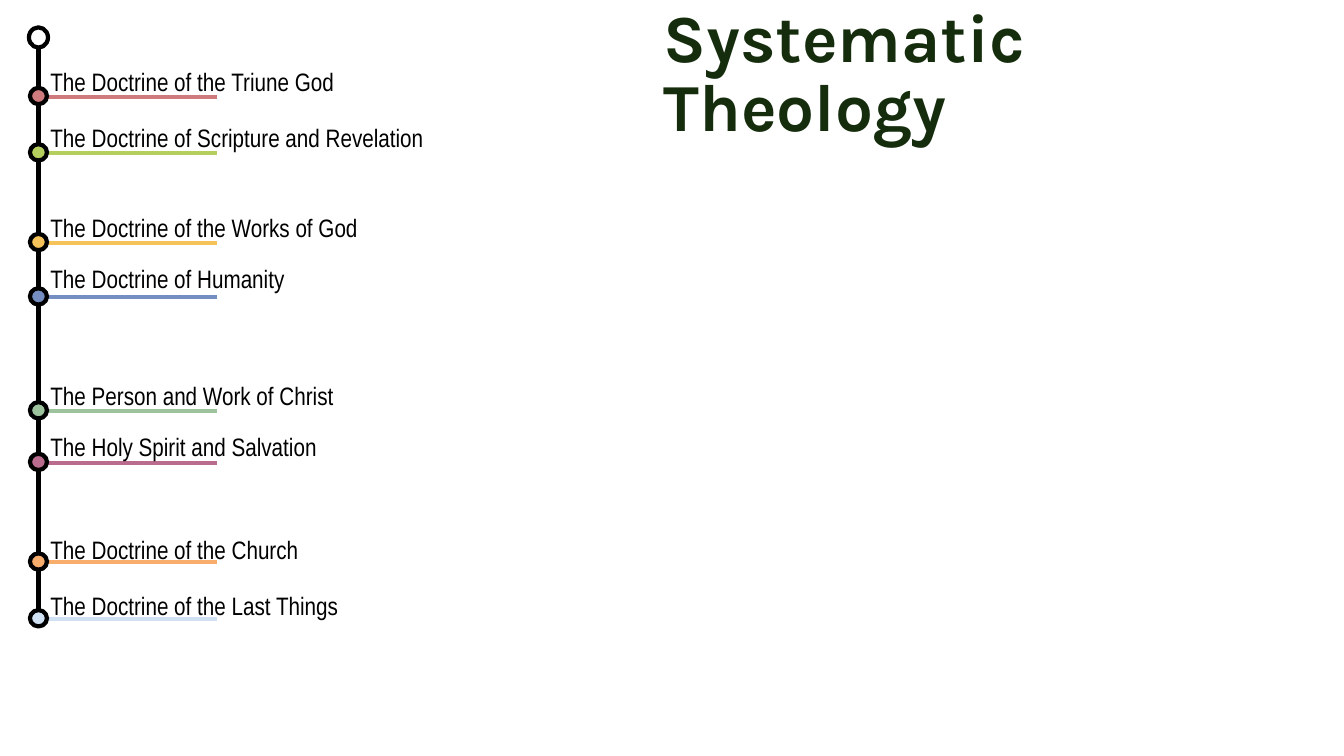
from collections import namedtuple

from lxml import etree
from pptx import Presentation
from pptx import util as u
from pptx.dml.color import RGBColor
from pptx.enum import shapes, text
from pptx.oxml.ns import qn

Box = namedtuple("Box", "left top width height")
Topic = namedtuple("Topic", "title color label_top rule_y label_width")

# Heights are in centimetres from the top of the timeline box.
TOPICS = [
    Topic("The Doctrine of the Triune God", "CF7A7C", 0.86, 1.75, 11),
    Topic("The Doctrine of Scripture and Revelation", "B5CF5E", 2.26, 3.17, 11),
    Topic("The Doctrine of the Works of God", "F5C35A", 4.54, 5.43, 11),
    Topic("The Doctrine of Humanity", "758EC1", 5.81, 6.8, 11),
    Topic("The Person and Work of Christ", "9DC39D", 8.78, 9.67, 9.7),
    Topic("The Holy Spirit and Salvation", "B96C8D", 10.05, 10.97, 9.7),
    Topic("The Doctrine of the Church", "F9AD6C", 12.65, 13.48, 9.7),
    Topic("The Doctrine of the Last Things", "CFE1F3", 14.07, 14.91, 9.7),
]
START_SIZE = (0.48, 0.51)
MARKER_SIZE = (0.43, 0.41)


def color(hex_string):
    return RGBColor.from_string(hex_string)


def add_line(slide, start, end, line_color):
    line = slide.shapes.add_connector(
        shapes.MSO_CONNECTOR.STRAIGHT, *(u.Cm(value) for value in (*start, *end))
    )
    line.line.color.rgb = color(line_color)
    line.line.width = u.Pt(3)
    etree.SubElement(line._element.spPr, qn("a:effectLst"))


def add_marker(slide, center_x, center_y, size, fill_color=None):
    """Draw a black ring, filled when a colour is given."""
    width, height = size
    marker = slide.shapes.add_shape(
        shapes.MSO_SHAPE.OVAL,
        u.Cm(center_x - width / 2), u.Cm(center_y - height / 2),
        u.Cm(width), u.Cm(height),
    )
    marker.shadow.inherit = False
    marker.line.color.rgb = color("000000")
    marker.line.width = u.Pt(3)
    if fill_color:
        marker.fill.solid()
        marker.fill.fore_color.rgb = color(fill_color)
    else:
        marker.fill.background()


def add_text(slide, box, words, font_name, size, text_color, bold=False):
    shape = slide.shapes.add_textbox(*(u.Cm(value) for value in box))
    frame = shape.text_frame
    frame.word_wrap = True
    frame.auto_size = text.MSO_AUTO_SIZE.SHAPE_TO_FIT_TEXT
    frame.text = words
    paragraph = frame.paragraphs[0]
    font = paragraph.runs[0].font
    font.name = font_name
    font.size = u.Pt(size)
    font.bold = bold
    font.color.rgb = color(text_color)
    return paragraph


def add_timeline(slide, box):
    spine_x = box.left + START_SIZE[0] / 2 + 0.02
    for topic in TOPICS:
        y = box.top + topic.rule_y
        add_line(slide, (box.left + box.width, y), (spine_x + 0.23, y), topic.color)
    for topic in TOPICS:
        label = Box(box.left + 0.31, box.top + topic.label_top, topic.label_width, 1.02)
        add_text(slide, label, topic.title, "Arial Narrow", 18, "000000")

    add_line(slide, (spine_x, box.top + box.height),
             (spine_x, box.top + START_SIZE[1]), "000000")
    add_marker(slide, spine_x, box.top + START_SIZE[1] / 2, START_SIZE)
    for topic in TOPICS:
        add_marker(slide, spine_x, box.top + topic.rule_y - 0.02, MARKER_SIZE, topic.color)


def add_title(slide, box):
    paragraph = add_text(slide, box, "Systematic Theology", "Karla", 48, "152D0D", bold=True)
    paragraph.line_spacing = 0.85


def main():
    presentation = Presentation()
    presentation.slide_width = u.Cm(33.87)
    presentation.slide_height = u.Cm(19.05)
    slide = presentation.slides.add_slide(presentation.slide_layouts[6])
    add_timeline(slide, Box(0.71, 0.69, 4.75, 14.86))
    add_title(slide, Box(16.48, 0.08, 16.66, 2.03))
    presentation.save("out.pptx")


if __name__ == "__main__":
    main()
